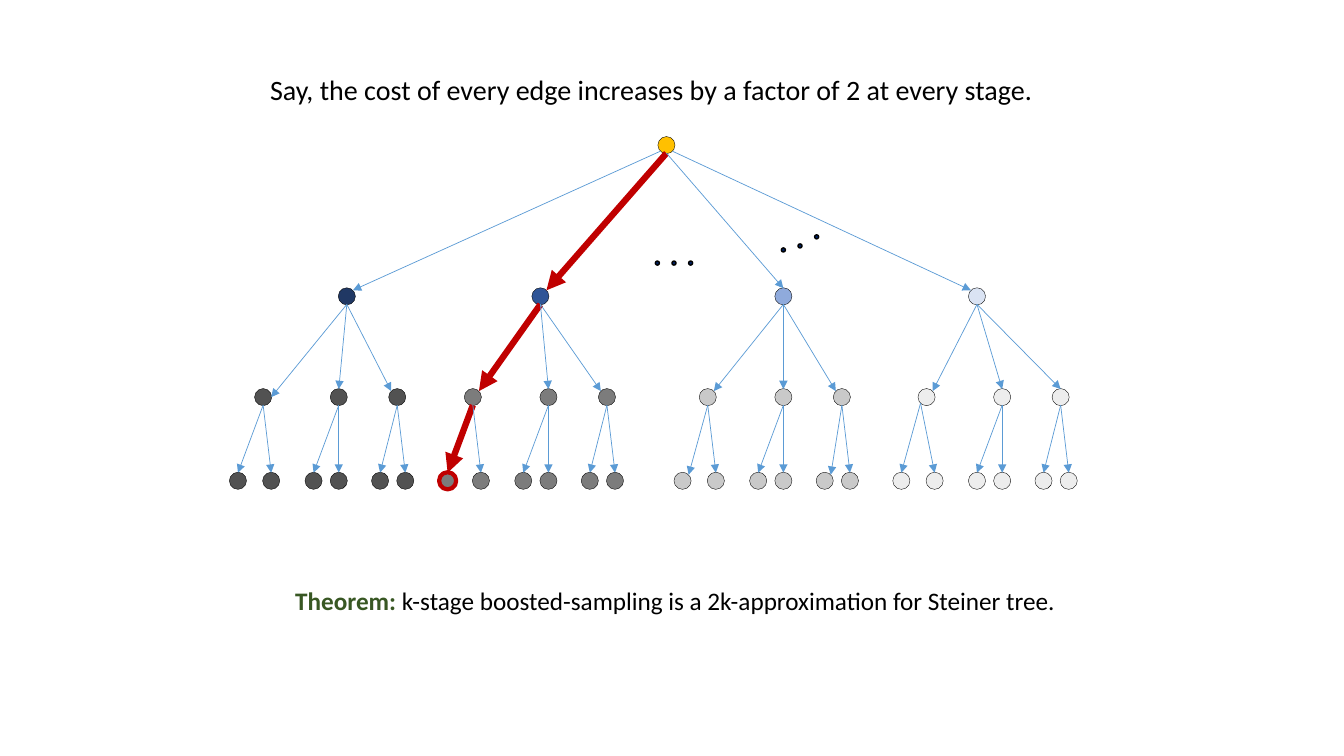
from lxml.etree import SubElement
from pptx import Presentation
from pptx.dml.color import RGBColor
from pptx.enum.shapes import MSO_CONNECTOR, MSO_SHAPE
from pptx.enum.text import MSO_ANCHOR, MSO_AUTO_SIZE
from pptx.oxml.ns import qn
from pptx.util import Pt

PX = 9144
WIDE, HIGH = 1333, 750
NODE, DOT = 17, 4
FONT = "Calibri"

BLACK = RGBColor(0x00, 0x00, 0x00)
GOLD = RGBColor(0xFF, 0xC0, 0x00)
RED = RGBColor(0xC0, 0x00, 0x00)
BLUE = RGBColor(0x5B, 0x9B, 0xD5)
NAVY = RGBColor(0x00, 0x20, 0x60)
GREEN = RGBColor(0x38, 0x57, 0x23)

PORTS = {
    "top": (0, -8), "top left": (-6, -6), "top right": (6, -6),
    "right": (8, 0), "bottom": (0, 8),
    "bottom left": (-6, 6), "bottom right": (6, 6),
}

ROOT = (434, 8)
LEVELS = (158, 258, 341)
KIDS = (0, 75, 133)
LEAVES = ((-25, 8), (-25, 0), (-17, 8))

# fmt: off
GROUPS = (
    (117, 34, RGBColor(0x20, 0x38, 0x64), RGBColor(0x52, 0x52, 0x52),
     "bottom left", "top right", ("right", "top", "top left")),
    (309, 242, RGBColor(0x2F, 0x55, 0x97), RGBColor(0x7C, 0x7C, 0x7C),
     "bottom", "top right", ("top right", "top", "top left")),
    (550, 475, RGBColor(0x8F, 0xAA, 0xDC), RGBColor(0xC9, 0xC9, 0xC9),
     "bottom", "top", ("top right", "top", "top left")),
    (742, 692, RGBColor(0xDA, 0xE3, 0xF3), RGBColor(0xED, 0xED, 0xED),
     "bottom right", "top left", ("top right", "top", "top")),
)
# fmt: on

LEAF_EXIT = {(3, 0): "bottom left"}
LEAF_ENTRY = {(2, 0): "top right", (2, 2): "top right"}


def disc(slide, spot, size, fill, line, width):
    x, y = spot
    shape = slide.shapes.add_shape(
        MSO_SHAPE.OVAL, int((x - size / 2) * PX), int((y - size / 2) * PX),
        size * PX, size * PX)
    shape.shadow.inherit = False
    shape.fill.solid()
    shape.fill.fore_color.rgb = fill
    shape.line.color.rgb = line
    shape.line.width = Pt(width)


def arrow(slide, start, leave, end, enter, hot):
    ends = [(spot[i] + PORTS[port][i]) * PX
            for spot, port in ((start, leave), (end, enter)) for i in (0, 1)]
    edge = slide.shapes.add_connector(MSO_CONNECTOR.STRAIGHT, *ends)
    edge.line.color.rgb = RED if hot else BLUE
    edge.line.width = Pt(4.5 if hot else 0.5)
    SubElement(edge.line._get_or_add_ln(), qn("a:tailEnd"), type="triangle")
    SubElement(edge._element.spPr, qn("a:effectLst"))


def tree(slide, box):
    left, top = box[:2]
    root = (left + ROOT[0], top + ROOT[1])
    mid, low, base = (top + level for level in LEVELS)
    nodes, edges = [(root, GOLD, False)], []
    for g, (x, first, tint, gray, leave, enter, ports) in enumerate(GROUPS):
        head = (left + x, mid)
        nodes.append((head, tint, False))
        edges.append((root, leave, head, enter, g == 1))
        for k, (step, port) in enumerate(zip(KIDS, ports)):
            kid = (left + first + step, low)
            nodes.append((kid, gray, False))
            edges.append((head, "bottom", kid, port, (g, k) == (1, 0)))
            for n, shift in enumerate(LEAVES[k]):
                leaf = (kid[0] + shift, base)
                hot = (g, k, n) == (1, 0, 0)
                out = LEAF_EXIT.get((g, k), "bottom")
                into = "top" if n else LEAF_ENTRY.get((g, k), "top")
                nodes.append((leaf, gray, hot))
                edges.append((kid, out, leaf, into, hot))
    for spot, fill, hot in nodes:
        disc(slide, spot, NODE, fill, RED if hot else BLACK, 3 if hot else 0.25)
    for edge in edges:
        arrow(slide, *edge)


def dots(slide, box, drops):
    left, top, wide = box
    gap = wide / (len(drops) - 1)
    for i, drop in enumerate(drops):
        disc(slide, (left + i * gap, top + drop), DOT, NAVY, BLACK, 1)


def label(slide, box, size, parts):
    shape = slide.shapes.add_textbox(*(n * PX for n in box))
    frame = shape.text_frame
    frame.word_wrap = False
    frame.auto_size = MSO_AUTO_SIZE.SHAPE_TO_FIT_TEXT
    frame.vertical_anchor = MSO_ANCHOR.TOP
    for text, color, bold in parts:
        run = frame.paragraphs[0].add_run()
        run.text = text
        run.font.name = FONT
        run.font.size = Pt(size)
        run.font.bold = bold
        run.font.color.rgb = color


def main():
    deck = Presentation()
    deck.slide_width, deck.slide_height = WIDE * PX, HIGH * PX
    slide = deck.slides.add_slide(deck.slide_layouts[6])
    tree(slide, (227, 136, 842, 350))
    dots(slide, (652, 261, 33), (0, 0, 0))
    dots(slide, (777, 235, 33), (13, 9, 0))
    label(slide, (283, 576, 780, 40), 18, (
        ("Theorem: ", GREEN, True),
        ("k-stage boosted-sampling is a 2k-approximation for Steiner tree.",
         BLACK, False)))
    label(slide, (258, 67, 777, 44), 20, (
        ("Say, the cost of every edge increases by a factor of 2 at every stage.",
         BLACK, False),))
    deck.save("out.pptx")


if __name__ == "__main__":
    main()
